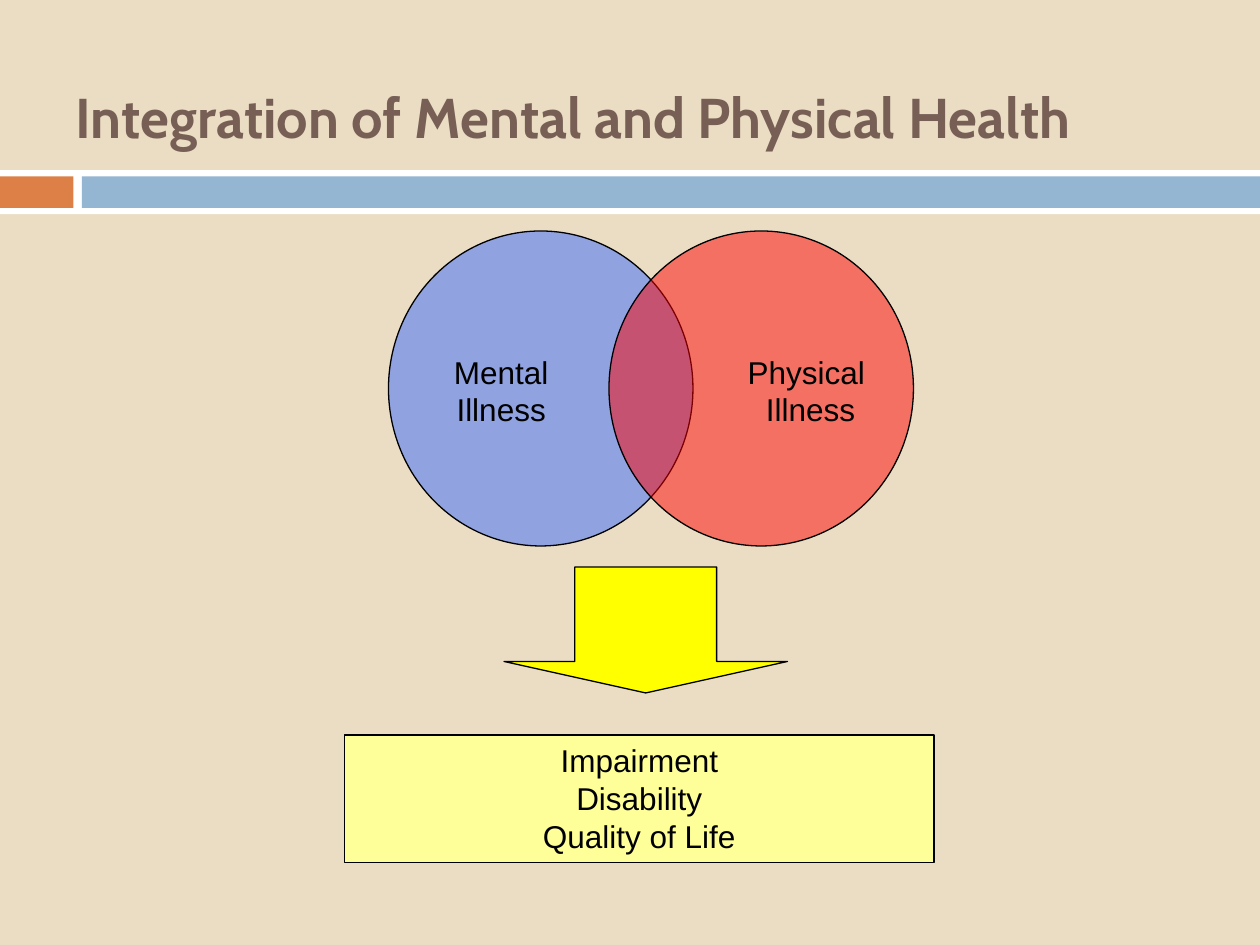
from lxml.etree import SubElement
from pptx import Presentation
from pptx.dml.color import RGBColor
from pptx.enum.shapes import MSO_SHAPE
from pptx.enum.text import MSO_ANCHOR, PP_ALIGN
from pptx.oxml.ns import qn
from pptx.util import Pt


def paint(fmt, color):
    """Set a solid colour on a fill."""
    fmt.solid()
    fmt.fore_color.rgb = RGBColor.from_string(color)


def fade(shape, part):
    """Make a solid fill see-through, with the opacity in percent."""
    tint = shape.fill._xPr.find(qn("a:solidFill"))[0]
    SubElement(tint, qn("a:alpha"), val=str(part * 1000))


def style(frame, size, font, color, align, bold=False):
    """Format every run in a text frame."""
    for para in frame.paragraphs:
        para.alignment = align
        for run in para.runs:
            run.font.size = Pt(size)
            run.font.name = font
            run.font.bold = bold
            paint(run.font.fill, color)


def add_form(slide, kind, box, color, edge=None):
    """Add a filled preset shape, outlined if an edge colour is given."""
    shape = slide.shapes.add_shape(kind, *map(Pt, box))
    shape.shadow.inherit = False
    paint(shape.fill, color)
    if edge:
        paint(shape.line.fill, edge)
        shape.line.width = Pt(0.75)
    else:
        shape.line.fill.background()
    return shape


def write(shape, text, wrap=True):
    """Put centred black text at the top of a shape."""
    frame = shape.text_frame
    frame.text = text
    frame.word_wrap = wrap
    frame.vertical_anchor = MSO_ANCHOR.TOP
    style(frame, 18, "Arial", "000000", PP_ALIGN.CENTER)


def add_label(slide, box, text, wrap):
    """Add a text box with a centred label."""
    write(slide.shapes.add_textbox(*map(Pt, box)), text, wrap)


def set_title(slide, text):
    """Place and format the title."""
    title = slide.shapes.title
    title.left, title.top, title.width, title.height = map(Pt, (36, 21.6, 648, 90))
    frame = title.text_frame
    frame.text = text
    frame.vertical_anchor = MSO_ANCHOR.MIDDLE
    style(frame, 32, "Cabin", "775F55", PP_ALIGN.LEFT, True)


def add_band(slide):
    """Add the coloured band below the title."""
    for left, top, width, height, color in (
        (0, 97.2, 720, 25.2, "FFFFFF"),
        (0, 100.8, 42, 18, "DD8047"),
        (46.8, 100.8, 673.2, 18, "94B6D2"),
    ):
        add_form(slide, MSO_SHAPE.RECTANGLE, (left, top, width, height), color)


def main():
    """Build the slide and save it."""
    deck = Presentation()
    deck.slide_width, deck.slide_height = Pt(720), Pt(540)
    slide = deck.slides.add_slide(deck.slide_layouts[5])
    paint(slide.background.fill, "EBDDC3")
    add_band(slide)
    set_title(slide, "Integration of Mental and Physical Health")

    for left, color in ((222, "3366FF"), (348, "FF0000")):
        disc = add_form(slide, MSO_SHAPE.OVAL, (left, 132, 174, 180), color, "000000")
        fade(disc, 49)

    arrow = add_form(slide, MSO_SHAPE.DOWN_ARROW, (288, 324, 162, 72), "FFFF00", "000000")
    arrow.adjustments[0], arrow.adjustments[1] = 0.5, 0.25

    panel = add_form(slide, MSO_SHAPE.RECTANGLE, (196.8, 420, 337, 72.7), "FFFF99", "000000")
    write(panel, "Impairment\nDisability\nQuality of Life")

    add_label(slide, (243.2, 198, 86.4, 50.4), "Mental\nIllness", True)
    add_label(slide, (420, 198, 86.4, 50.4), "Physical \nIllness", False)
    deck.save("out.pptx")


if __name__ == "__main__":
    main()
